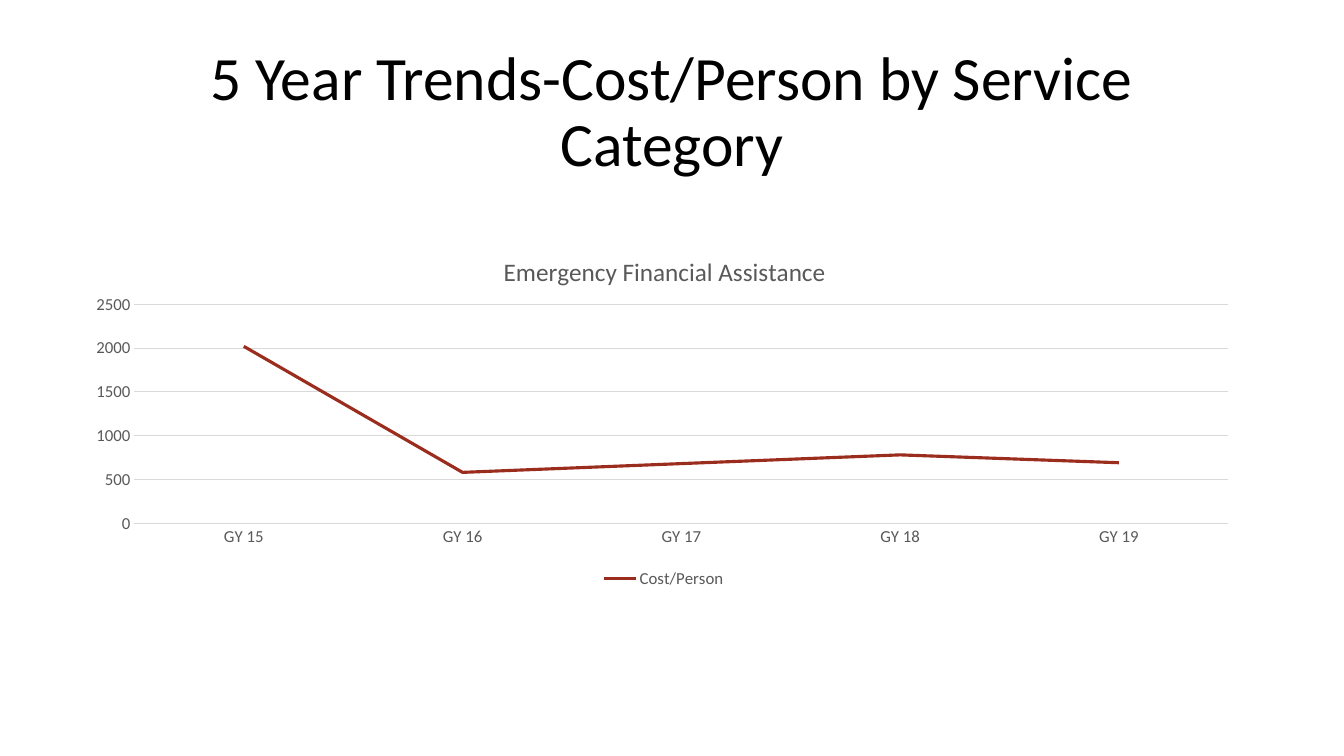
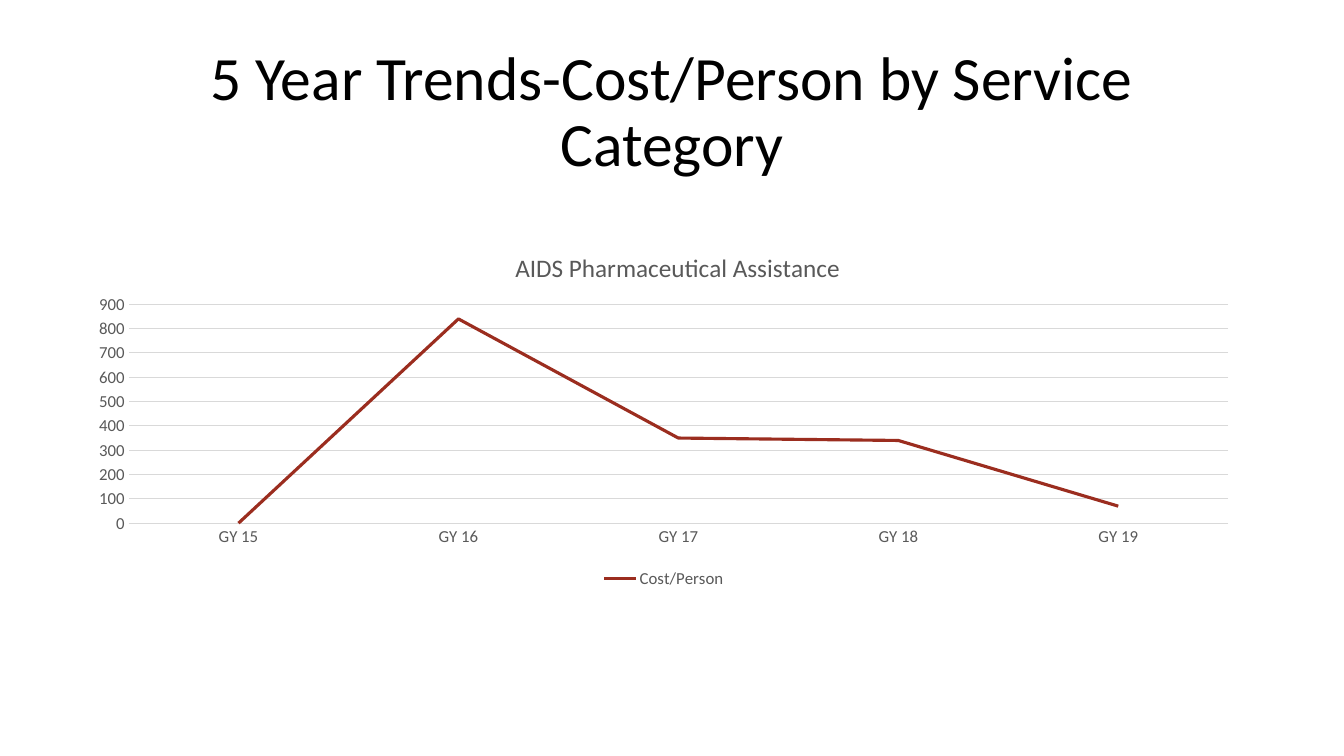
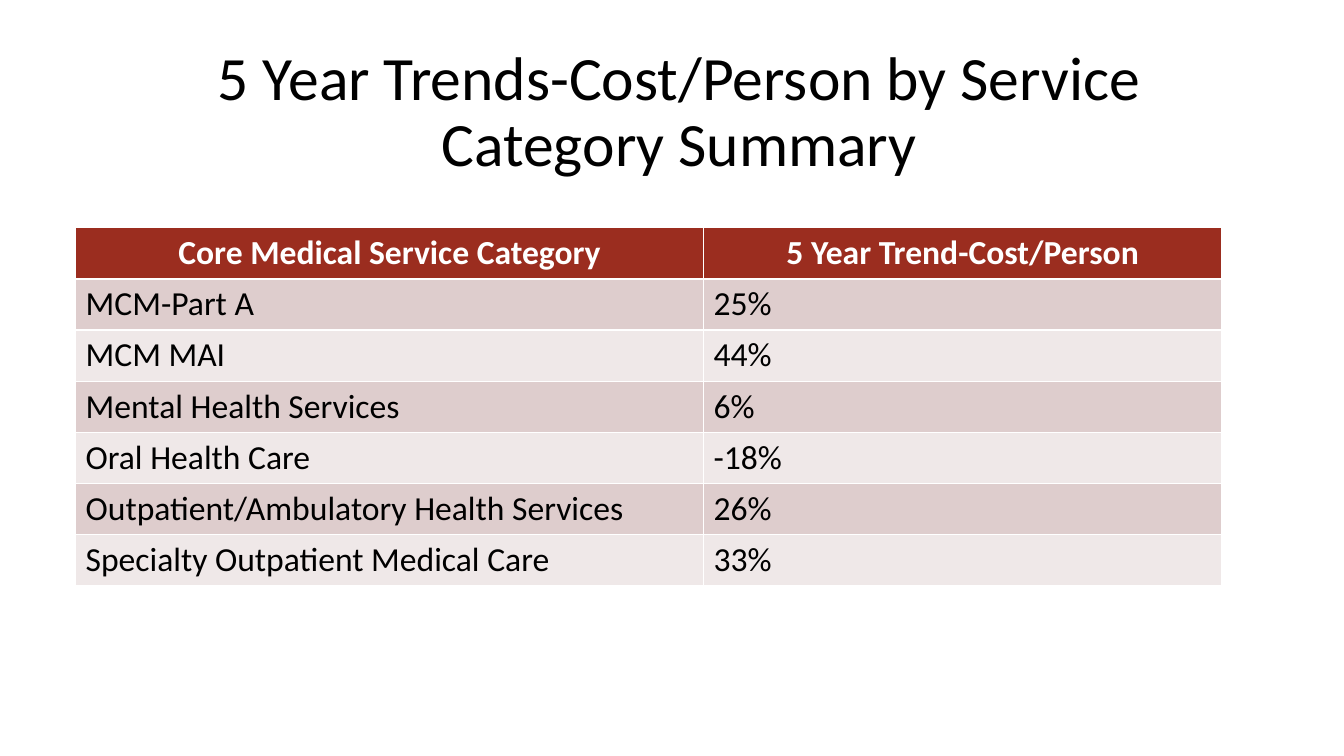
from dataclasses import dataclass

from lxml import etree
from pptx import Presentation
from pptx.chart import data as chart_data
from pptx.dml.color import RGBColor
from pptx.enum import chart as chart_enum, text
from pptx.oxml import ns
from pptx.util import Pt


@dataclass(frozen=True)
class Theme:
    font: str = "Calibri"
    ink: RGBColor = RGBColor(0x00, 0x00, 0x00)
    paper: RGBColor = RGBColor(0xFF, 0xFF, 0xFF)
    accent: RGBColor = RGBColor(0x9B, 0x2D, 0x1F)
    label: RGBColor = RGBColor(0x59, 0x59, 0x59)
    grid: RGBColor = RGBColor(0xD9, 0xD9, 0xD9)
    bands: tuple[RGBColor, RGBColor] = (
        RGBColor(0xDE, 0xCD, 0xCD),
        RGBColor(0xEF, 0xE8, 0xE8),
    )
    title_size: int = 44
    table_size: int = 24
    chart_title_size: int = 18
    label_size: int = 12


@dataclass(frozen=True)
class Trend:
    """One service category; x and y values are fractions of the chart's size."""

    category: str
    costs: tuple[int, ...]
    title_x: float
    title_y: float
    plot_x: float


THEME = Theme()
TITLE = "5 Year Trends-Cost/Person by Service Category"
CONTENT_LEFT, CONTENT_TOP = Pt(54), Pt(162.7)
PLOT_RIGHT, PLOT_Y, PLOT_HEIGHT = 0.98, 0.21, 0.6
GRANT_YEARS = [f"GY {year}" for year in range(15, 20)]
TRENDS = [
    Trend("Emergency Financial Assistance", (2020, 580, 680, 780, 690), 0.36, 0.06, 0.05),
    Trend("AIDS Pharmaceutical Assistance", (0, 840, 350, 340, 70), 0.37, 0.05, 0.045),
]
SUMMARY = [
    ("Core Medical Service Category", "5 Year Trend-Cost/Person"),
    ("MCM-Part A", "25%"),
    ("MCM MAI", "44%"),
    ("Mental Health Services", "6%"),
    ("Oral Health Care", "-18%"),
    ("Outpatient/Ambulatory Health Services", "26%"),
    ("Specialty Outpatient Medical Care", "33%"),
]
COLUMN_WIDTHS = (Pt(448.6), Pt(370.1))
ROW_HEIGHT = Pt(36)


def style_font(font, size: int, color: RGBColor, bold: bool = False) -> None:
    font.name = THEME.font
    font.size = Pt(size)
    font.bold = bold
    font.color.rgb = color


def add_titled_slide(prs, title: str, width: float = 828):
    slide = prs.slides.add_slide(prs.slide_layouts[5])
    heading = slide.shapes.title
    heading.left, heading.top = Pt(66), Pt(28.8)
    heading.width, heading.height = Pt(width), Pt(104.4)
    frame = heading.text_frame
    frame.text = title
    frame.word_wrap = True
    frame.auto_size = text.MSO_AUTO_SIZE.NONE
    frame.vertical_anchor = text.MSO_ANCHOR.MIDDLE
    paragraph = frame.paragraphs[0]
    paragraph.alignment = text.PP_ALIGN.CENTER
    paragraph.line_spacing = 0.9
    style_font(paragraph.font, THEME.title_size, THEME.ink)
    return slide


def place(part, index: int, **settings: str | float) -> None:
    """Give a chart part a manual layout, inserted as its child at index."""
    for old in part.findall(ns.qn("c:layout")):
        part.remove(old)
    layout = etree.Element(ns.qn("c:layout"))
    manual = etree.SubElement(layout, ns.qn("c:manualLayout"))
    for name, value in settings.items():
        etree.SubElement(manual, ns.qn(f"c:{name}")).set("val", str(value))
    part.insert(index, layout)


def add_trend_chart(slide, trend: Trend) -> None:
    costs = chart_data.CategoryChartData()
    costs.categories = GRANT_YEARS
    costs.add_series("Cost/Person", trend.costs)
    chart = slide.shapes.add_chart(
        chart_enum.XL_CHART_TYPE.LINE, CONTENT_LEFT, CONTENT_TOP, Pt(840.2), Pt(260.6), costs
    ).chart
    style_font(chart.font, THEME.label_size, THEME.label)

    caption = chart.chart_title.text_frame
    caption.text = trend.category
    style_font(caption.paragraphs[0].font, THEME.chart_title_size, THEME.label)
    chart.chart_title.include_in_layout = False

    chart.has_legend = True
    chart.legend.position = chart_enum.XL_LEGEND_POSITION.BOTTOM
    chart.legend.include_in_layout = False

    years, amounts = chart.category_axis, chart.value_axis
    for axis in (years, amounts):
        axis.major_tick_mark = axis.minor_tick_mark = chart_enum.XL_TICK_MARK.NONE
    amounts.format.line.fill.background()
    for line in (years.format.line, amounts.major_gridlines.format.line):
        line.color.rgb = THEME.grid
        line.width = Pt(0.75)

    plot = chart.plots[0]
    plot.vary_by_categories = False
    cost_line = plot.series[0]
    cost_line.smooth = False
    cost_line.format.line.color.rgb = THEME.accent
    cost_line.format.line.width = Pt(2.25)

    title_part = chart.element.xpath("c:chart/c:title")[0]
    place(title_part, 1, xMode="edge", yMode="edge", x=trend.title_x, y=trend.title_y)
    plot_part = chart.element.xpath("c:chart/c:plotArea")[0]
    place(
        plot_part, 0, layoutTarget="inner", xMode="edge", yMode="edge",
        x=trend.plot_x, y=PLOT_Y, w=round(PLOT_RIGHT - trend.plot_x, 3), h=PLOT_HEIGHT,
    )


def add_summary_table(slide) -> None:
    table = slide.shapes.add_table(
        len(SUMMARY), len(COLUMN_WIDTHS), CONTENT_LEFT, CONTENT_TOP,
        sum(COLUMN_WIDTHS), ROW_HEIGHT * len(SUMMARY),
    ).table
    for column, width in zip(table.columns, COLUMN_WIDTHS):
        column.width = width
    for row, entries in enumerate(SUMMARY):
        is_header = row == 0
        table.rows[row].height = ROW_HEIGHT
        for col, entry in enumerate(entries):
            cell = table.cell(row, col)
            cell.text = entry
            cell.fill.solid()
            cell.fill.fore_color.rgb = THEME.accent if is_header else THEME.bands[(row - 1) % 2]
            paragraph = cell.text_frame.paragraphs[0]
            paragraph.alignment = text.PP_ALIGN.CENTER if is_header else text.PP_ALIGN.LEFT
            color = THEME.paper if is_header else THEME.ink
            style_font(paragraph.font, THEME.table_size, color, bold=is_header)


def main() -> None:
    prs = Presentation()
    prs.slide_width, prs.slide_height = Pt(960), Pt(540)
    for trend in TRENDS:
        add_trend_chart(add_titled_slide(prs, TITLE), trend)
    add_summary_table(add_titled_slide(prs, f"{TITLE} Summary", width=838.8))
    prs.save("out.pptx")


if __name__ == "__main__":
    main()
